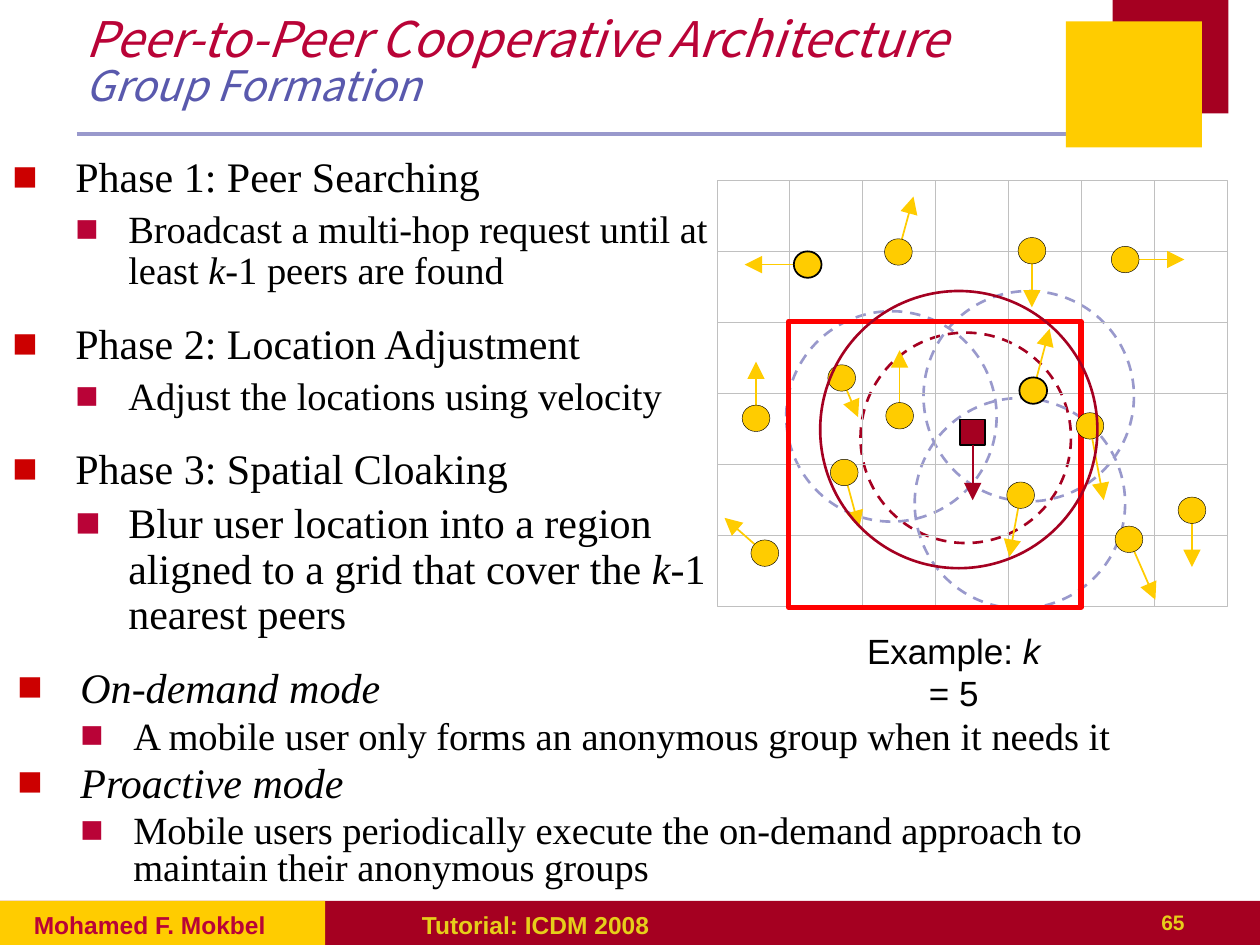
from dataclasses import dataclass
from lxml import etree
from pptx import Presentation
from pptx.dml.color import RGBColor
from pptx.enum.dml import MSO_LINE
from pptx.enum.shapes import MSO_CONNECTOR, MSO_SHAPE
from pptx.enum.text import MSO_ANCHOR, PP_ALIGN
from pptx.oxml.ns import qn
from pptx.util import Cm, Pt

RECT, OVAL = MSO_SHAPE.RECTANGLE, MSO_SHAPE.OVAL
STRAIGHT = MSO_CONNECTOR.STRAIGHT
DASH = MSO_LINE.DASH
MIDDLE = MSO_ANCHOR.MIDDLE
CENTER, RIGHT = PP_ALIGN.CENTER, PP_ALIGN.RIGHT


@dataclass(frozen=True)
class Theme:
    maroon: str = "A50021"
    crimson: str = "B90337"
    gold: str = "FFCC00"
    footer: str = "E6CE1A"
    lavender: str = "9999CC"
    indigo: str = "5959AD"
    grid: str = "C0C0C0"
    region: str = "FF0000"
    bullet: str = "CC0000"
    ink: str = "000000"
    title_font: str = "Noto Sans CJK KR"
    body_font: str = "Times New Roman"
    label_font: str = "Arial"
    title_size: int = 28
    heading_size: int = 24
    detail_size: int = 22
    label_size: int = 20
    footer_size: int = 14
    number_size: int = 12


THEME = Theme()
BIG, SMALL = THEME.heading_size, THEME.detail_size

TITLE = "Peer-to-Peer Cooperative Architecture\vGroup Formation"
GAP, SPACE = 17, 5
PHASES = [
    (0, BIG, 0, [("Phase 1: Peer Searching", False)]),
    (1, SMALL, SPACE, [("Broadcast a multi-hop request until at least ", False),
                       ("k", True), ("-1 peers are found", False)]),
    (0, BIG, GAP, [("Phase 2: Location Adjustment", False)]),
    (1, SMALL, SPACE, [("Adjust the locations using velocity", False)]),
    (0, BIG, GAP, [("Phase 3: Spatial Cloaking", False)]),
    (1, BIG, SPACE, [("Blur user location into a region aligned to a grid that cover the ", False),
                     ("k", True), ("-1 nearest peers", False)]),
]
MODES = [
    (0, BIG, 0, [("On-demand mode", True)]),
    (1, SMALL, SPACE, [("A mobile user only forms an anonymous group when it needs it", False)]),
    (0, BIG, SPACE, [("Proactive mode", True)]),
    (1, SMALL, SPACE, [("Mobile users periodically execute the on-demand approach to "
                        "maintain their anonymous groups", False)]),
]
EXAMPLE = [("Example: ", False), ("k ", True), ("= 5", False)]
INDENTS = [(0.5, THEME.bullet), (0.92, THEME.crimson)]
HANGING = [0.5, 0.42]

BANDS = [
    (0, 7.15, 10, 0.35, THEME.maroon),
    (0, 7.15, 2.58, 0.35, THEME.gold),
    (8.83, 0, 0.92, 0.9, THEME.maroon),
    (8.46, 0.17, 1.08, 1, THEME.gold),
]
FOOTERS = [
    ("65", 7.42, 2.08, THEME.number_size, THEME.footer, RIGHT),
    ("Tutorial: ICDM 2008", 3.25, 4.67, THEME.footer_size, THEME.footer, None),
    ("Mohamed F. Mokbel", 0.17, 2.33, THEME.footer_size, THEME.crimson, None),
]

GRID_LEFT, GRID_TOP, COLUMNS, ROWS = 5.69, 1.43, 7, 6
CELL_WIDTH, CELL_HEIGHT = 4.05 / COLUMNS, 3.38 / ROWS
RANGE = 1.67
RANGES = [
    (6.83, 2.64, THEME.maroon),
    (6.24, 2.47, THEME.lavender),
    (7.26, 3.16, THEME.lavender),
    (7.33, 2.31, THEME.lavender),
]
PEERS = [
    ((8.93, 2.06), (9.4, 2.06), 0.25),
    ((9.46, 4.05), (9.46, 4.5), 0.25),
    ((6.41, 2.1), (5.91, 2.1), 1),
    ((7.13, 2), (7.25, 1.56), 0.25),
    ((8.19, 1.99), (8.19, 2.44), 0.25),
    ((8.2, 3.1), (8.33, 2.61), 1),
    ((8.65, 3.38), (8.76, 3.97), 0.25),
    ((6, 3.32), (6, 2.87), 0.25),
    ((6.07, 4.39), (5.75, 4.11), 0.25),
    ((7.14, 3.3), (7.14, 2.78), 0.25),
    ((8.96, 4.28), (9.17, 4.76), 0.25),
    ((6.7, 3.75), (6.82, 4.19), 0.25),
    ((6.68, 3), (6.81, 3.31), 0.25),
    ((8.1, 3.93), (8.01, 4.42), 0.25),
]
PEER_WIDTH, PEER_HEIGHT = 0.22, 0.21


def inches(*values):
    return [Cm(value * 2.54) for value in values]


def rgb(color):
    return RGBColor.from_string(color)


def add_figure(slide, preset, box, fill=None, line=None, weight=1, dash=None):
    figure = slide.shapes.add_shape(preset, *inches(*box))
    figure.shadow.inherit = False
    if fill:
        figure.fill.solid()
        figure.fill.fore_color.rgb = rgb(fill)
    else:
        figure.fill.background()
    if line:
        figure.line.color.rgb = rgb(line)
        figure.line.width = Pt(weight)
        figure.line.dash_style = dash
    else:
        figure.line.fill.background()
    return figure


def add_line(slide, start, end, color, weight, arrow=False):
    line = slide.shapes.add_connector(STRAIGHT, *inches(*start, *end))
    line.line.color.rgb = rgb(color)
    line.line.width = Pt(weight)
    if arrow:
        etree.SubElement(line.line._get_or_add_ln(), qn("a:tailEnd"),
                         type="triangle", w="lg", len="lg")
    etree.SubElement(line._element.spPr, qn("a:effectLst"))
    return line


def add_text(slide, box):
    frame = slide.shapes.add_textbox(*inches(*box)).text_frame
    frame.word_wrap = True
    return frame


def style(font, name, size, color, bold=False, italic=False):
    font.name, font.size, font.bold, font.italic = name, Pt(size), bold, italic
    font.color.rgb = rgb(color)


def add_runs(paragraph, pieces, name, size):
    for text, italic in pieces:
        run = paragraph.add_run()
        run.text = text
        style(run.font, name, size, THEME.ink, italic=italic)


def add_bullets(slide, box, items, spacing):
    frame = add_text(slide, box)
    for index, (level, size, before, pieces) in enumerate(items):
        paragraph = frame.add_paragraph() if index else frame.paragraphs[0]
        margin, color = INDENTS[level]
        left, hanging = inches(margin, HANGING[level])
        properties = paragraph._p.get_or_add_pPr()
        properties.set("marL", str(left))
        properties.set("indent", str(-hanging))
        bullet_color = etree.SubElement(properties, qn("a:buClr"))
        etree.SubElement(bullet_color, qn("a:srgbClr"), val=color)
        etree.SubElement(properties, qn("a:buFont"), typeface=THEME.body_font)
        etree.SubElement(properties, qn("a:buChar"), char="■")
        paragraph.level = level
        paragraph.line_spacing = spacing
        paragraph.space_before = Pt(before)
        add_runs(paragraph, pieces, THEME.body_font, size)


def add_frame(slide):
    add_line(slide, (0.61, 1.06), (8.53, 1.06), THEME.lavender, 2.25)
    for *box, color in BANDS:
        add_figure(slide, RECT, box, fill=color)
    for text, left, width, size, color, align in FOOTERS:
        paragraph = add_text(slide, (left, 7.17, width, 0.33)).paragraphs[0]
        paragraph.text = text
        paragraph.alignment = align
        style(paragraph.runs[0].font, THEME.label_font, size, color, bold=True)
    frame = add_text(slide, (0.58, 0.09, 7.67, 0.83))
    frame.vertical_anchor = MIDDLE
    title = frame.paragraphs[0]
    title.text = TITLE
    title.line_spacing = 0.85
    looks = [(THEME.title_size, THEME.crimson), (THEME.heading_size, THEME.indigo)]
    for run, (size, color) in zip(title.runs, looks):
        style(run.font, THEME.title_font, size, color, italic=True)


def add_map(slide):
    for left, top, color in RANGES:
        add_figure(slide, OVAL, (left, top, RANGE, RANGE), line=color, weight=1.5, dash=DASH)
    for row in range(ROWS):
        for column in range(COLUMNS):
            cell = (GRID_LEFT + column * CELL_WIDTH, GRID_TOP + row * CELL_HEIGHT,
                    CELL_WIDTH, CELL_HEIGHT)
            add_figure(slide, RECT, cell, line=THEME.grid, weight=0.38)
    for center, tip, _ in PEERS:
        add_line(slide, center, tip, THEME.gold, 1, arrow=True)
    user = add_figure(slide, RECT, (7.62, 3.33, 0.2, 0.2), THEME.maroon, THEME.ink)
    velocity = add_line(slide, (7.72, 3.53), (7.72, 3.97), THEME.maroon, 1, arrow=True)
    velocity.begin_connect(user, 2)
    add_figure(slide, RECT, (6.26, 2.55, 2.32, 2.27), line=THEME.region, weight=3)
    for (x, y), _, weight in PEERS:
        peer = (x - PEER_WIDTH / 2, y - PEER_HEIGHT / 2, PEER_WIDTH, PEER_HEIGHT)
        add_figure(slide, OVAL, peer, THEME.gold, THEME.ink, weight)
    add_figure(slide, OVAL, (6.51, 2.31, 2.2, 2.2), line=THEME.maroon, weight=1.5)
    example = add_text(slide, (6.67, 4.95, 1.8, 0.43)).paragraphs[0]
    example.alignment = CENTER
    add_runs(example, EXAMPLE, THEME.label_font, THEME.label_size)


def main():
    deck = Presentation()
    deck.slide_width, deck.slide_height = inches(10, 7.5)
    slide = deck.slides.add_slide(deck.slide_layouts[6])
    add_frame(slide)
    add_bullets(slide, (0, 1.19, 5.75, 4.33), PHASES, 0.9)
    add_map(slide)
    add_bullets(slide, (0.04, 5.28, 9.7, 1.96), MODES, 0.8)
    deck.save("out.pptx")


if __name__ == "__main__":
    main()
